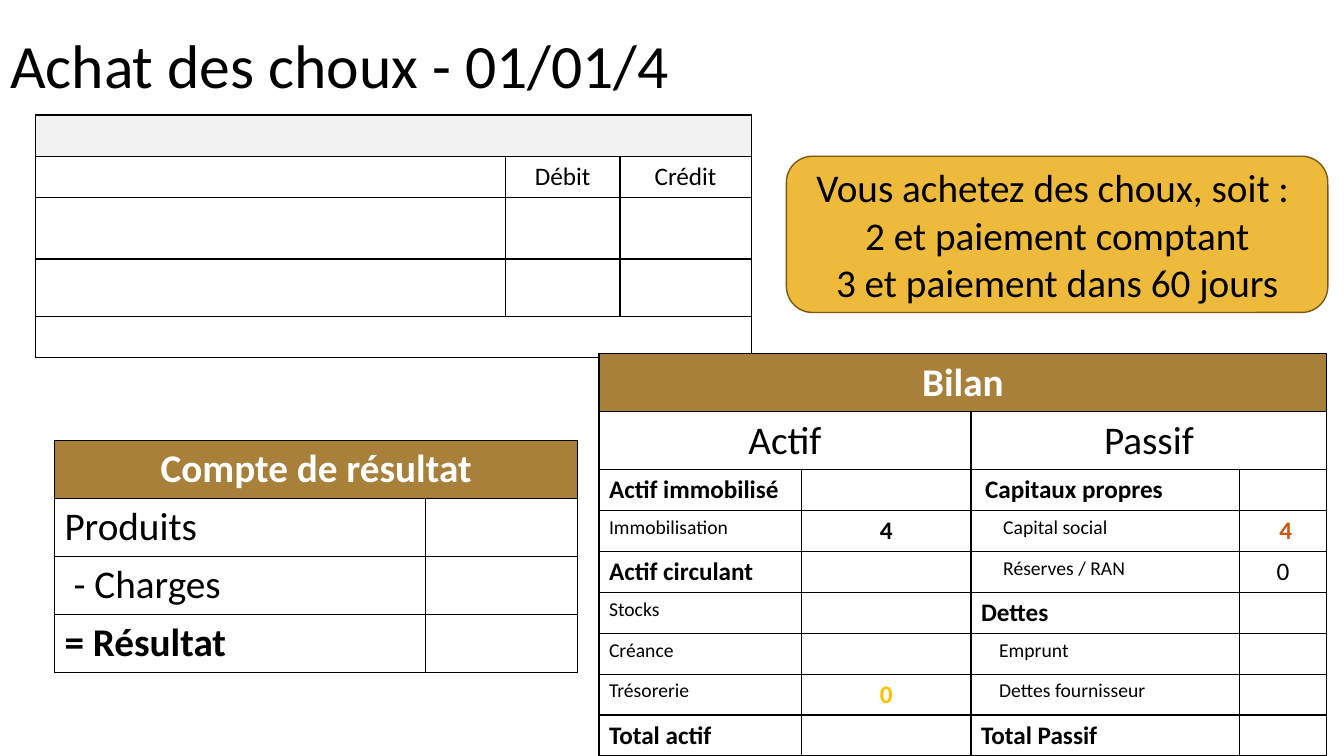
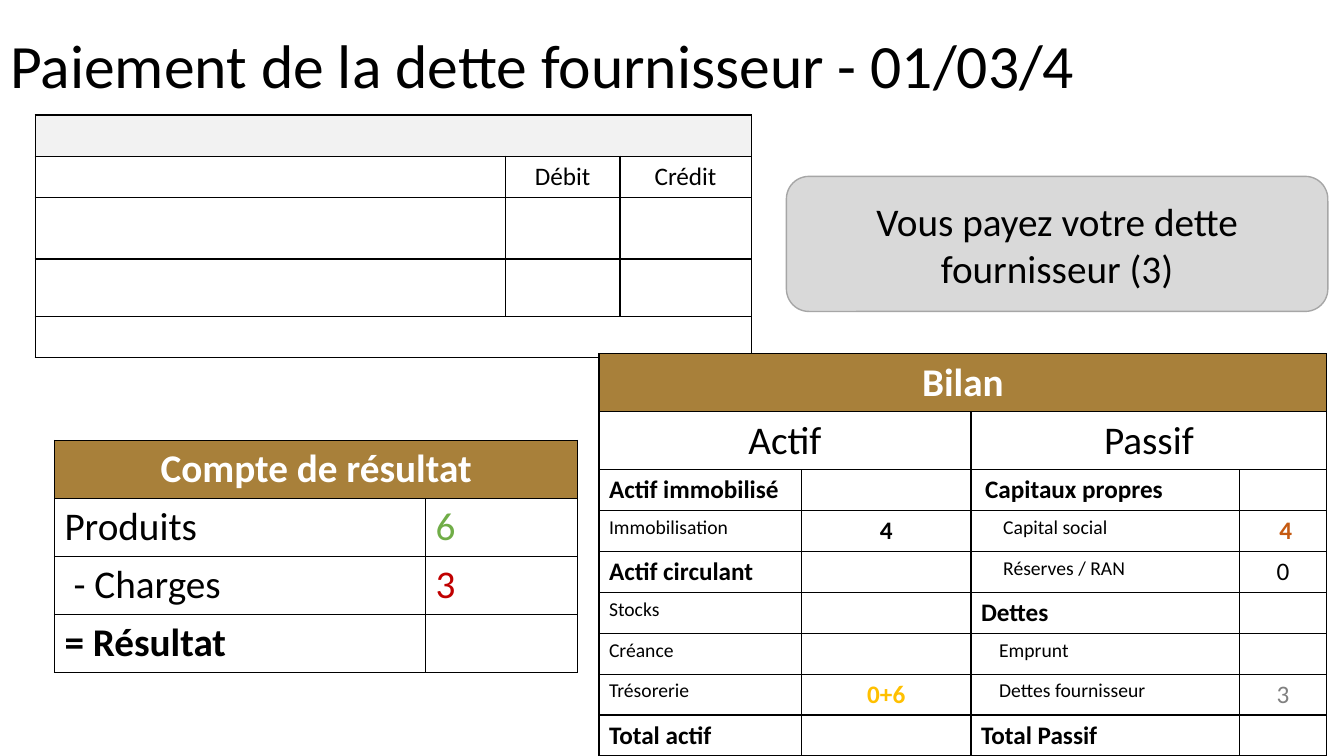
import pptx
import pptx.util
import pptx.dml.color
import pptx.enum.text
import pptx.enum.shapes
import pptx.oxml.ns
import lxml.etree

Inches = pptx.util.Inches
Pt = pptx.util.Pt
ALIGN = pptx.enum.text.PP_ALIGN
ANCHOR = pptx.enum.text.MSO_ANCHOR

FONT = "Calibri"
BLACK, WHITE, PALE, BROWN = "000000", "FFFFFF", "F2F2F2", "A8803A"
ORANGE, GOLD, GREY = "C55A11", "FFC000", "808080"
GREEN, RED = "70AD47", "C00000"

MID = {"align": ALIGN.CENTER}
BIG = {"size": 28}
HEAD = {"size": 28, "bold": True, "color": WHITE, "fill": BROWN, **MID}
BOLD = {"bold": True}
SMALL = {"size": 14}
EQUITY = {"size": 14, "indent": 0.22}
DEBT = {"size": 14, "indent": 0.18}
NONE = ("", {})

SLIDES = [
    {
        "title": "Achat des choux - 01/01/4",
        "card": ["Vous achetez des choux, soit : ", "2 et paiement comptant",
                 "3 et paiement dans 60 jours"],
        "top": 1.55, "high": 1.55, "fill": "EEBA3C", "line": "7B5913",
        "income": "", "costs": "", "cash": "0", "owed": "",
    },
    {
        "title": "Paiement de la dette fournisseur - 01/03/4",
        "card": ["Vous payez votre dette fournisseur (3)"],
        "top": 1.75, "high": 1.34, "fill": "D9D9D9", "line": "A6A6A6",
        "income": "6", "costs": "3", "cash": "0+6", "owed": "3",
    },
]

JOURNAL = {
    "at": (0.35, 1.14),
    "cols": [4.66, 1.14, 1.3],
    "rows": [0.41, 0.41, 0.61, 0.57, 0.41],
    "spans": [(0, 0, 2), (4, 0, 2)],
    "cells": [
        [("", {"fill": PALE}), NONE, NONE],
        [NONE, ("Débit", MID), ("Crédit", MID)],
        [NONE] * 3,
        [NONE] * 3,
        [NONE] * 3,
    ],
}


def result(data):
    return {
        "at": (0.54, 4.37),
        "cols": [3.68, 1.51],
        "rows": [0.57] * 4,
        "spans": [(0, 0, 1)],
        "cells": [
            [("Compte de résultat", HEAD), NONE],
            [("Produits", BIG), (data["income"], {**BIG, "color": GREEN})],
            [("- Charges", {**BIG, "indent": 0.09}),
             (data["costs"], {**BIG, "color": RED})],
            [("= Résultat", {**BIG, **BOLD}), NONE],
        ],
    }


def balance(data):
    return {
        "at": (5.94, 3.51),
        "cols": [2.01, 1.68, 2.66, 0.87],
        "rows": [0.57] * 2 + [0.4] * 7,
        "spans": [(0, 0, 3), (1, 0, 1), (1, 2, 3)],
        "cells": [
            [("Bilan", HEAD), NONE, NONE, NONE],
            [("Actif", {**BIG, **MID}), NONE, ("Passif", {**BIG, **MID}), NONE],
            [("Actif immobilisé", BOLD), NONE,
             ("Capitaux propres", {**BOLD, "indent": 0.04}), NONE],
            [("Immobilisation", SMALL), ("4", {**BOLD, **MID}),
             ("Capital social", EQUITY), (" 4", {**BOLD, **MID, "color": ORANGE})],
            [("Actif circulant", BOLD), NONE,
             ("Réserves / RAN", EQUITY), ("0", MID)],
            [("Stocks", SMALL), NONE, ("Dettes", BOLD), NONE],
            [("Créance", SMALL), NONE, ("Emprunt", DEBT), NONE],
            [("Trésorerie", SMALL), (data["cash"], {**BOLD, **MID, "color": GOLD}),
             ("Dettes fournisseur", DEBT), (data["owed"], {**MID, "color": GREY})],
            [("Total actif", BOLD), NONE, ("Total Passif", BOLD), NONE],
        ],
    }


def rgb(code):
    return pptx.dml.color.RGBColor.from_string(code)


def write(frame, lines, size=18, color=BLACK, bold=False, align=ALIGN.LEFT,
          indent=0, space=1.0):
    for i, line in enumerate(lines):
        para = frame.paragraphs[0] if i == 0 else frame.add_paragraph()
        para.alignment = align
        para.line_spacing = space
        if indent:
            para._p.get_or_add_pPr().set("marL", str(Inches(indent)))
        run = para.add_run()
        run.text = line
        run.font.name = FONT
        run.font.size = Pt(size)
        run.font.bold = bold
        run.font.color.rgb = rgb(color)


def border(cell):
    name = pptx.oxml.ns.qn
    props = cell._tc.get_or_add_tcPr()
    for side in ("a:lnL", "a:lnR", "a:lnT", "a:lnB"):
        line = lxml.etree.SubElement(props, name(side), w=str(Pt(1)))
        fill = lxml.etree.SubElement(line, name("a:solidFill"))
        lxml.etree.SubElement(fill, name("a:srgbClr"), val=BLACK)


def grid(slide, spec):
    cols, rows = spec["cols"], spec["rows"]
    left, top = spec["at"]
    table = slide.shapes.add_table(
        len(rows), len(cols), Inches(left), Inches(top),
        Inches(sum(cols)), Inches(sum(rows))).table
    table.first_row = False
    table.horz_banding = False
    for col, width in zip(table.columns, cols):
        col.width = Inches(width)
    for row, high in zip(table.rows, rows):
        row.height = Inches(high)
    for r, line in enumerate(spec["cells"]):
        for c, (text, style) in enumerate(line):
            cell = table.cell(r, c)
            style = dict(style)
            fill = style.pop("fill", None)
            border(cell)
            if fill:
                cell.fill.solid()
                cell.fill.fore_color.rgb = rgb(fill)
            else:
                cell.fill.background()
            if text:
                write(cell.text_frame, [text], **style)
    for r, first, last in spec["spans"]:
        table.cell(r, first).merge(table.cell(r, last))


def head(slide, text):
    title = slide.shapes.title
    title.left, title.top = Inches(0), Inches(0.3)
    title.width, title.height = Inches(11.5), Inches(1.45)
    frame = title.text_frame
    frame.auto_size = pptx.enum.text.MSO_AUTO_SIZE.NONE
    frame.vertical_anchor = ANCHOR.TOP
    write(frame, [text], size=44, space=0.9)


def card(slide, data):
    shape = slide.shapes.add_shape(
        pptx.enum.shapes.MSO_SHAPE.ROUNDED_RECTANGLE,
        Inches(7.8), Inches(data["top"]), Inches(5.37), Inches(data["high"]))
    shape.shadow.inherit = False
    shape.fill.solid()
    shape.fill.fore_color.rgb = rgb(data["fill"])
    shape.line.color.rgb = rgb(data["line"])
    shape.line.width = Pt(1)
    shape.text_frame.word_wrap = True
    shape.text_frame.vertical_anchor = ANCHOR.MIDDLE
    write(shape.text_frame, data["card"], **BIG, **MID)


def main():
    deck = pptx.Presentation()
    deck.slide_width, deck.slide_height = Inches(13.33), Inches(7.5)
    for data in SLIDES:
        slide = deck.slides.add_slide(deck.slide_layouts[5])
        head(slide, data["title"])
        for table in (JOURNAL, result(data), balance(data)):
            grid(slide, table)
        card(slide, data)
    deck.save("out.pptx")


if __name__ == "__main__":
    main()
